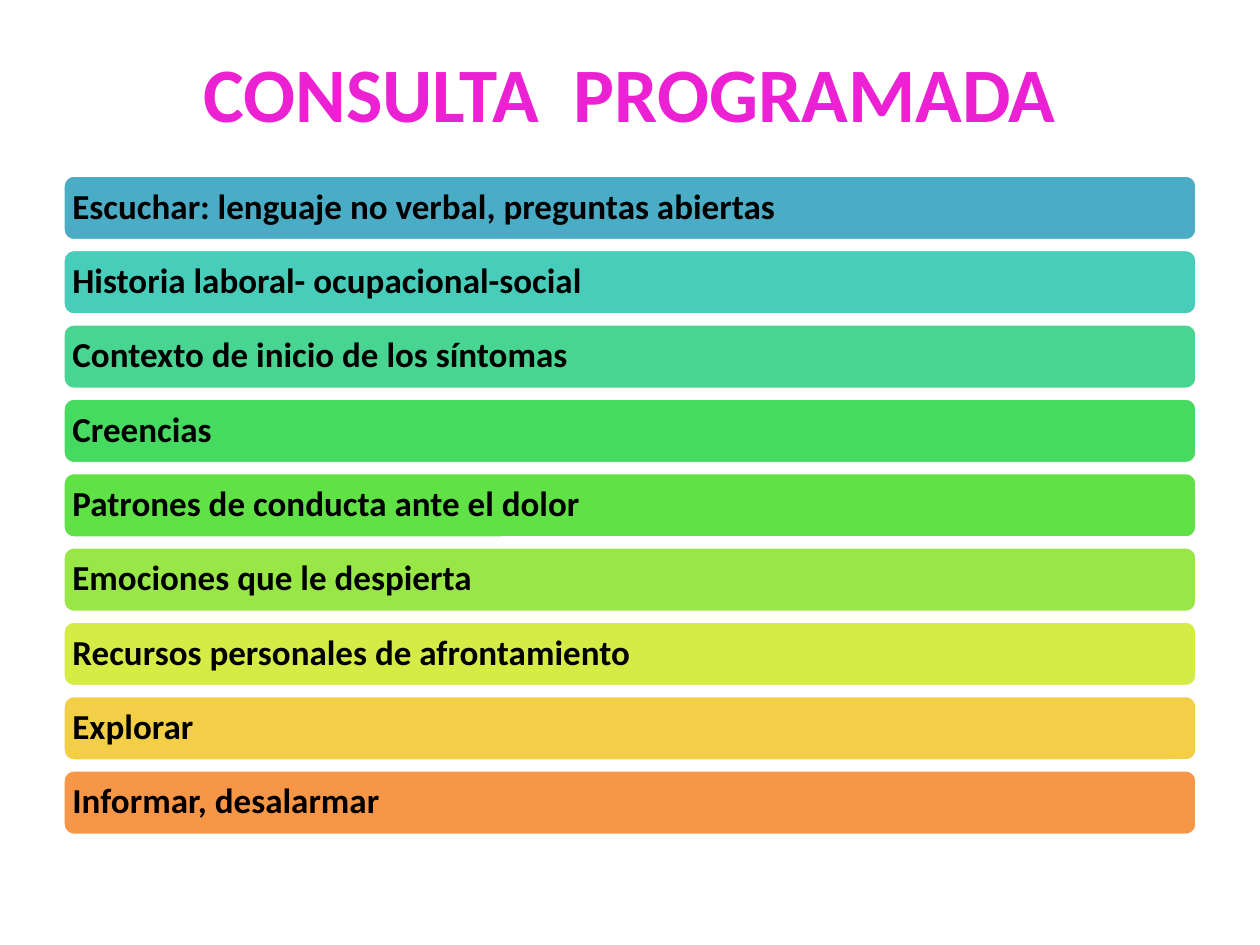
from pptx import Presentation
from pptx.dml.color import RGBColor
from pptx.enum.shapes import MSO_SHAPE as Shape
from pptx.enum.text import MSO_ANCHOR as Anchor, PP_ALIGN as Align
from pptx.util import Inches, Pt

MARGIN, CONTENT_WIDTH = 0.05, 0.9  # shares of the slide width
FIRST_ROW, ROW_PITCH, BAR_HEIGHT = 1.39, 0.59, 0.52  # inches

STEPS = [
    ("Escuchar: lenguaje no verbal, preguntas abiertas", "4BACC6"),
    ("Historia laboral- ocupacional-social", "49CDBB"),
    ("Contexto de inicio de los síntomas", "48D491"),
    ("Creencias", "47DA61"),
    ("Patrones de conducta ante el dolor", "60E146"),
    ("Emociones que le despierta", "98E746"),
    ("Recursos personales de afrontamiento", "D5EC46"),
    ("Explorar", "F2CF46"),
    ("Informar, desalarmar", "F79646"),
]


def color(hex_code):
    return RGBColor.from_string(hex_code)


class StepPage:
    """Style and current slide for a list of coloured bars."""

    font_name = "Calibri"

    def __init__(self, deck):
        self.page = deck.slides.add_slide(deck.slide_layouts[5])
        self.left = int(deck.slide_width * MARGIN)
        self.width = int(deck.slide_width * CONTENT_WIDTH)

    def set_text(self, shape, text, size, hex_code, align):
        frame = shape.text_frame
        frame.word_wrap = True
        frame.vertical_anchor = Anchor.MIDDLE
        para = frame.paragraphs[0]
        para.text = text
        para.alignment = align
        para.font.name = self.font_name
        para.font.size = Pt(size)
        para.font.bold = True
        para.font.color.rgb = color(hex_code)
        return para

    def title(self, text):
        box = self.page.shapes.title
        box.left, box.top = self.left, Inches(0.3)
        box.width, box.height = self.width, Inches(0.85)
        self.set_text(box, text, 44, "EB21D3", Align.CENTER)

    def bar(self, row, text, fill):
        top = Inches(FIRST_ROW + row * ROW_PITCH)
        box = self.page.shapes.add_shape(
            Shape.ROUNDED_RECTANGLE, self.left, top, self.width, Inches(BAR_HEIGHT))
        box.shadow.inherit = False
        box.fill.solid()
        box.fill.fore_color.rgb = color(fill)
        box.line.color.rgb = color("FFFFFF")
        box.line.width = Pt(2)
        # The rounded corner adds a little to the left inset
        box.text_frame.margin_left = Inches(0.05)
        para = self.set_text(box, text, 20, "000000", Align.LEFT)
        para.line_spacing = 0.9


def main():
    deck = Presentation()
    deck.slide_width, deck.slide_height = Inches(10), Inches(7.5)
    step_page = StepPage(deck)

    # Heading
    step_page.title("CONSULTA  PROGRAMADA")

    # One bar per step
    for row, (text, fill) in enumerate(STEPS):
        step_page.bar(row, text, fill)

    deck.save("out.pptx")


if __name__ == "__main__":
    main()
